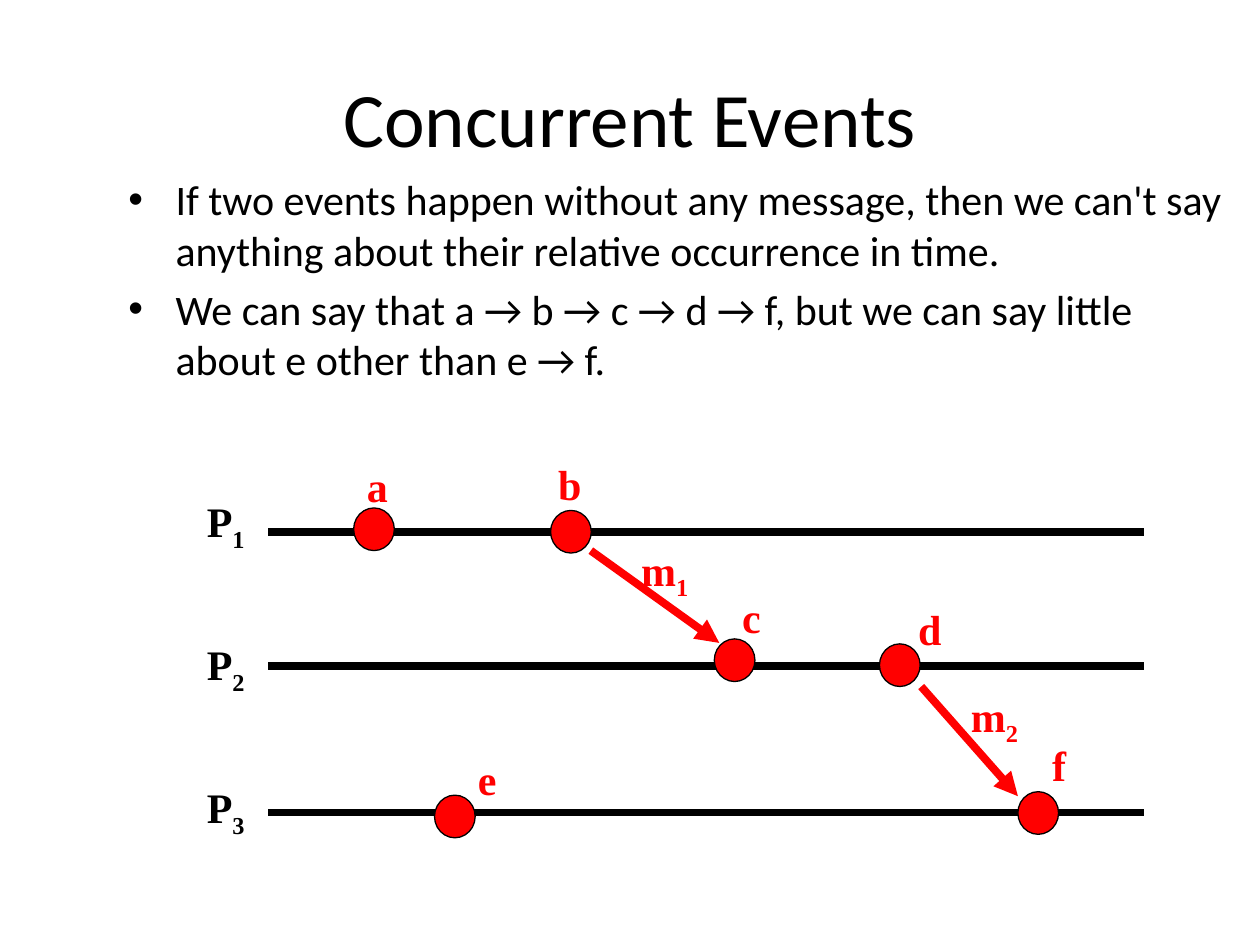
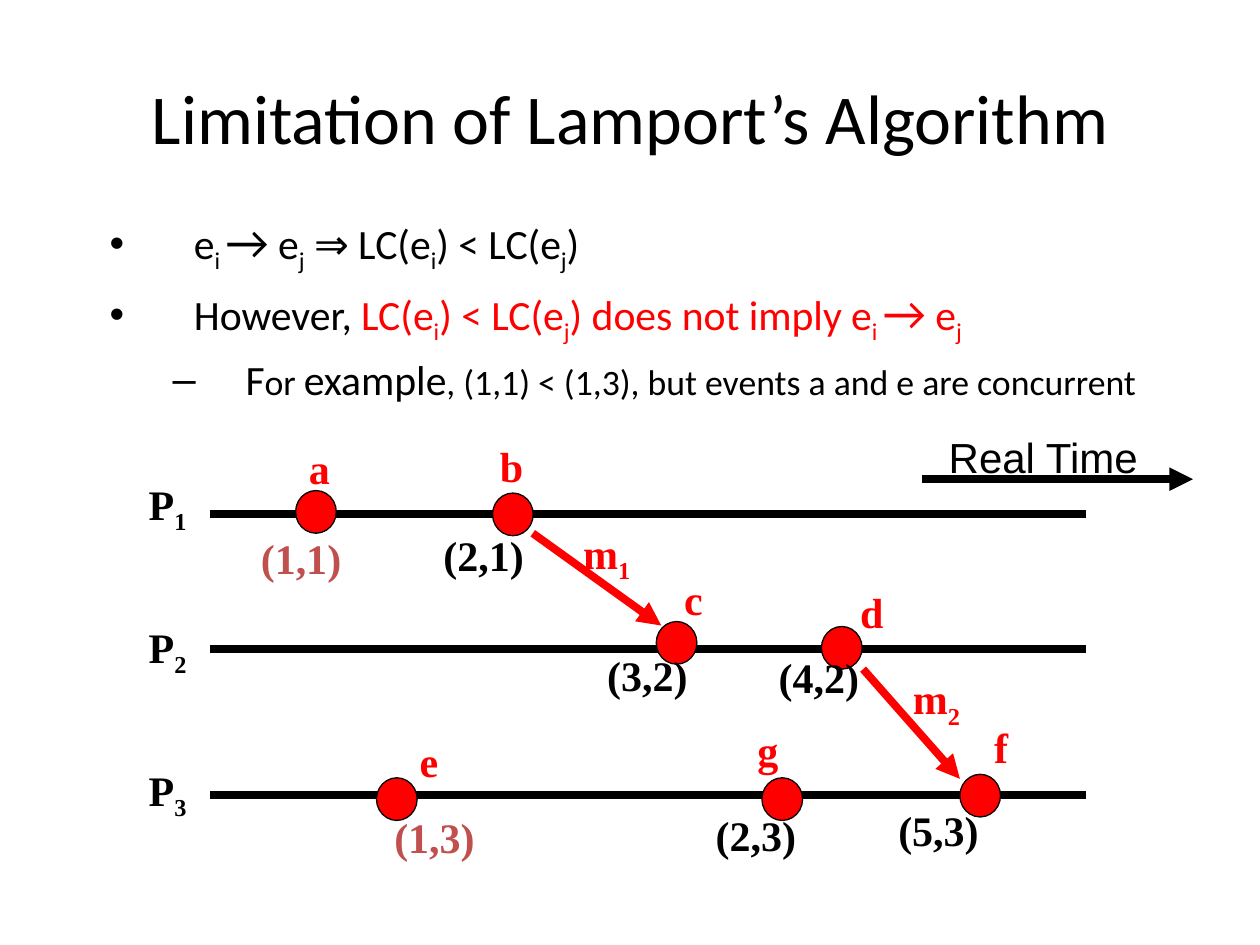
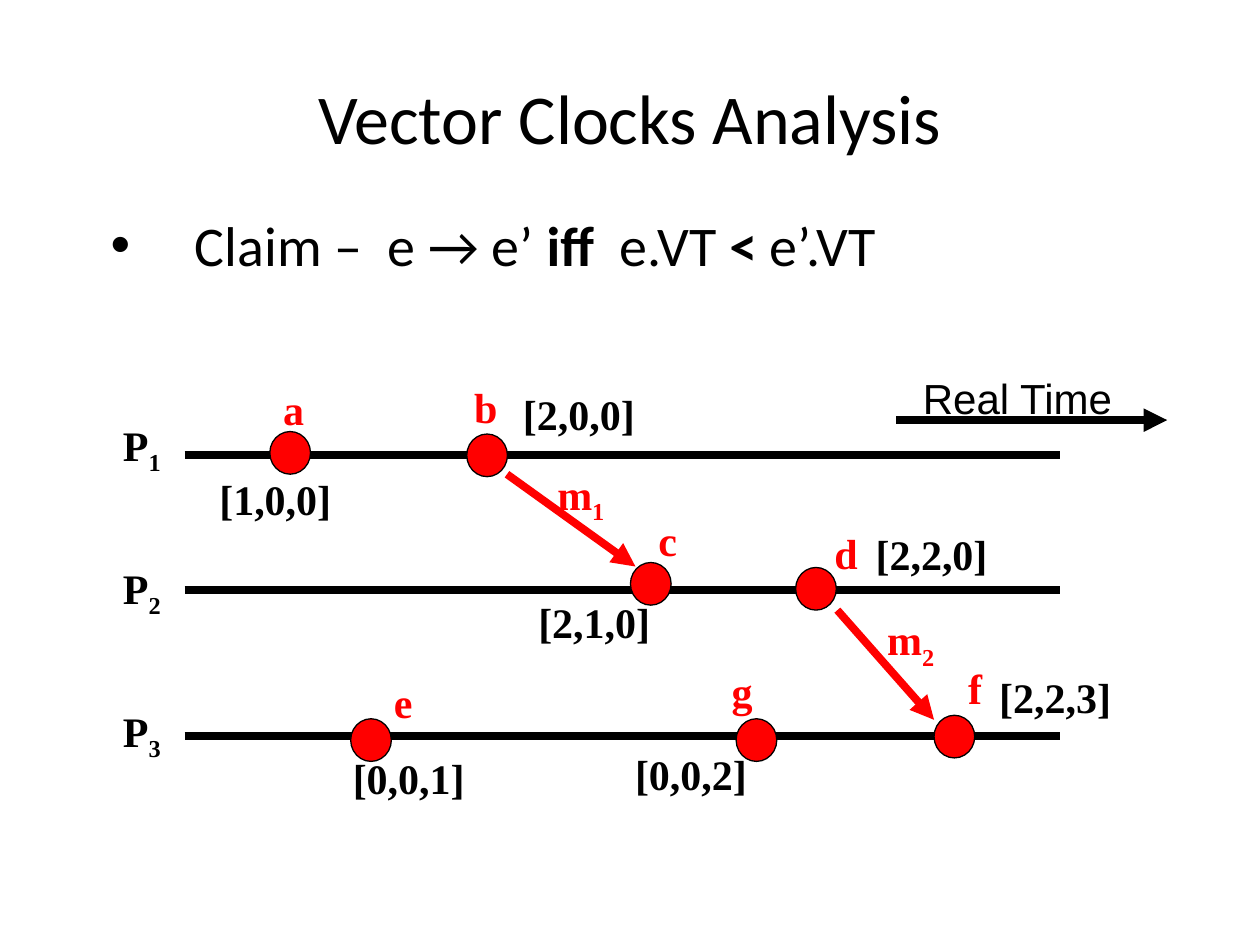
"""Three slides on event ordering, logical clocks and vector clocks."""
from lxml import etree
from pptx import Presentation, util as u
from pptx.dml.color import RGBColor
from pptx.enum import shapes, text as t
from pptx.oxml.ns import qn

COLORS = {"ink": "000000", "event": "FF0000", "concurrent": "C0504D"}
SANS, SERIF, PLAIN = "Calibri", "Times New Roman", "Arial"
RED, BOLD = {"color": "event"}, {"bold": True}
BIG, SMALL = {"size": 27.2}, {"size": 20.4}

SLIDES = [
    {
        "title": "Concurrent Events", "title_size": 44,
        "body_at": (2.34, 3.38, 22.6, 13.77), "body_size": 24,
        "body": [
            ("•", 0.95, 0.95, [("If two events happen without any message, then we can't say "
                                "anything about their relative occurrence in time.", {})]),
            ("•", 0.95, 0.95, [("We can say that a → b → c → d → f, but we can say little "
                                "about e other than e → f.", {})]),
        ],
        "origin": (5.41, 10.72), "events": "abcdef", "stamps": [],
    },
    {
        "title": "Limitation of Lamport’s Algorithm", "title_size": 40,
        "body_at": (1.96, 4.14, 21.82, 4.34), "body_size": 23.8,
        "body": [
            ("•", 1.7, 1.7, [("e_i _", {}), ("→", BIG), (" e_j_ ⇒ LC(e_i_) < LC(e_j_)", {})]),
            ("•", 1.7, 1.7, [("However, ", {}),
                             ("LC(e_i_) < LC(e_j_) does not imply e_i _", RED),
                             ("→", {**BIG, **RED}), (" e_j_", RED)]),
            ("–", 2.74, 1.47, [("F", {}), ("or ", SMALL), ("example", {}),
                               (", (1,1) < (1,3), but events a and e are concurrent", SMALL)]),
        ],
        "origin": (4.24, 10.37), "events": "abcdefg", "stamp_width": 2.13,
        "stamps": [
            ("(1,1)", 1.83, 0.25, "concurrent"), ("(2,1)", 5.51, 0.18, "ink"),
            ("(3,2)", 8.81, 2.59, "ink"), ("(4,2)", 12.27, 2.64, "ink"),
            ("(5,3)", 14.68, 5.72, "ink"), ("(1,3)", 4.52, 5.87, "concurrent"),
            ("(2,3)", 11, 5.82, "ink"),
        ],
    },
    {
        "title": "Vector Clocks Analysis", "title_size": 40,
        "body_at": (1.98, 4.11, 21.82, 2.67), "body_size": 32,
        "body": [
            ("•", 1.7, 1.7, [("Claim –  e → e’ ", {}), ("iff  ", BOLD), ("e.VT ", {}),
                             ("< ", BOLD), ("e’.VT", {})]),
        ],
        "origin": (3.72, 9.18), "events": "abcdefg", "stamp_width": 2.77,
        "stamps": [
            ("[1,0,0]", 1.83, 0.25, "ink"), ("[2,0,0]", 7.95, -1.47, "ink"),
            ("[2,1,0]", 8.26, 2.72, "ink"), ("[2,2,0]", 15.06, 1.35, "ink"),
            ("[2,2,3]", 17.55, 4.24, "ink"), ("[0,0,1]", 4.52, 5.87, "ink"),
            ("[0,0,2]", 10.21, 5.79, "ink"),
        ],
    },
]

LINE_LENGTH = 17.65
PROCESS_ROWS = (0, 2.71, 5.66)
PROCESS_LABEL_X, PROCESS_LABEL_TOP, PROCESS_LABEL_STEP = -0.86, -0.85, 2.88
DOT_WIDTH, DOT_HEIGHT = 0.82, 0.86
EVENTS = {  # dot centre, then label centre and top
    "a": ((2.13, -0.05), (2.2, -1.57)), "b": ((6.1, 0), (6.06, -1.61)),
    "c": ((9.4, 2.59), (9.74, 1.07)), "d": ((12.73, 2.69), (13.32, 1.32)),
    "e": ((3.76, 5.74), (4.41, 4.34)), "f": ((15.52, 5.67), (15.94, 4.06)),
    "g": ((11.53, 5.74), (11.24, 4.11)),
}
MESSAGES = [
    ("m_1_", (6.5, 0.38), (9.09, 2.24), (7.99, 0.13)),
    ("m_2_", (13.16, 3.12), (15.11, 5.33), (14.64, 3.07)),
]


def rgb(name):
    return RGBColor.from_string(COLORS[name])


def write(para, words, size=24, font=SANS, color="ink", bold=False):
    """Add text to a paragraph, lowering the parts between underscores."""
    for index, part in enumerate(words.split("_")):
        if part:
            span = para.add_run()
            span.text = part
            span.font.size, span.font.name, span.font.bold = u.Pt(size), font, bold
            span.font.color.rgb = rgb(color)
            if index % 2:
                span.font._element.set("baseline", "-25000")


def add_box(page, left, top, width, height, wrap=True):
    box = page.shapes.add_textbox(u.Cm(left), u.Cm(top), u.Cm(width), u.Cm(height))
    box.text_frame.word_wrap = wrap
    return box.text_frame


def add_title(page, words, size):
    frame = add_box(page, 1.27, 0.76, 22.86, 3.18)
    frame.vertical_anchor = t.MSO_ANCHOR.MIDDLE
    frame.paragraphs[0].alignment = t.PP_ALIGN.CENTER
    write(frame.paragraphs[0], words, size=size)


def add_body(page, place, items, size):
    frame = add_box(page, *place)
    for index, (bullet, margin, hanging, spans) in enumerate(items):
        para = frame.add_paragraph() if index else frame.paragraphs[0]
        para.space_before = u.Pt(round(size * 0.2, 1))
        props = para._p.get_or_add_pPr()
        props.set("marL", str(u.Cm(margin)))
        props.set("indent", str(-u.Cm(hanging)))
        etree.SubElement(props, qn("a:buFont")).set("typeface", PLAIN)
        etree.SubElement(props, qn("a:buChar")).set("char", bullet)
        for words, changes in spans:
            write(para, words, **{"size": size, **changes})


def add_label(page, words, center, top, width, font=SERIF, bold=True, color="ink"):
    frame = add_box(page, center - width / 2, top, width, 1.27, wrap=False)
    frame.auto_size = t.MSO_AUTO_SIZE.SHAPE_TO_FIT_TEXT
    frame.paragraphs[0].alignment = t.PP_ALIGN.CENTER
    write(frame.paragraphs[0], words, font=font, bold=bold, color=color)


def add_line(page, start, end, color="ink", arrow=False):
    line = page.shapes.add_connector(shapes.MSO_CONNECTOR.STRAIGHT,
                                     *(u.Cm(value) for value in (*start, *end)))
    line.line.width = u.Pt(4.5)
    line.line.color.rgb = rgb(color)
    if arrow:
        etree.SubElement(line.line._get_or_add_ln(), qn("a:tailEnd")).set("type", "triangle")
    etree.SubElement(line._element.spPr, qn("a:effectLst"))


def add_dot(page, x, y):
    dot = page.shapes.add_shape(shapes.MSO_SHAPE.OVAL, u.Cm(x - DOT_WIDTH / 2),
                                u.Cm(y - DOT_HEIGHT / 2), u.Cm(DOT_WIDTH), u.Cm(DOT_HEIGHT))
    dot.shadow.inherit = False
    dot.fill.solid()
    dot.fill.fore_color.rgb = rgb("event")
    dot.line.color.rgb = rgb("ink")
    dot.line.width = u.Pt(0.75)


def add_diagram(page, content):
    def at(point):
        return tuple(base + shift for base, shift in zip(content["origin"], point))

    for index, row in enumerate(PROCESS_ROWS):
        add_line(page, at((0, row)), at((LINE_LENGTH, row)))
        top = PROCESS_LABEL_TOP + index * PROCESS_LABEL_STEP
        add_label(page, f"P_{index + 1}_", *at((PROCESS_LABEL_X, top)), 1.32)
    if content["stamps"]:
        add_line(page, at((14.35, -0.71)), at((19.81, -0.71)), arrow=True)
        add_label(page, "Real Time", *at((16.79, -1.8)), 4.37, font=PLAIN, bold=False)
    for name in content["events"]:
        add_dot(page, *at(EVENTS[name][0]))
    for words, start, end, label in MESSAGES:
        add_line(page, at(start), at(end), color="event", arrow=True)
        add_label(page, words, *at(label), 1.5, color="event")
    for name in content["events"]:
        add_label(page, name, *at(EVENTS[name][1]), 0.94, color="event")
    for words, center, top, color in content["stamps"]:
        add_label(page, words, *at((center, top)), content["stamp_width"], color=color)


def main():
    deck = Presentation()
    deck.slide_width, deck.slide_height = u.Cm(25.4), u.Cm(19.05)
    for content in SLIDES:
        page = deck.slides.add_slide(deck.slide_layouts[6])
        add_title(page, content["title"], content["title_size"])
        add_body(page, content["body_at"], content["body"], content["body_size"])
        add_diagram(page, content)
    deck.save("out.pptx")


if __name__ == "__main__":
    main()
